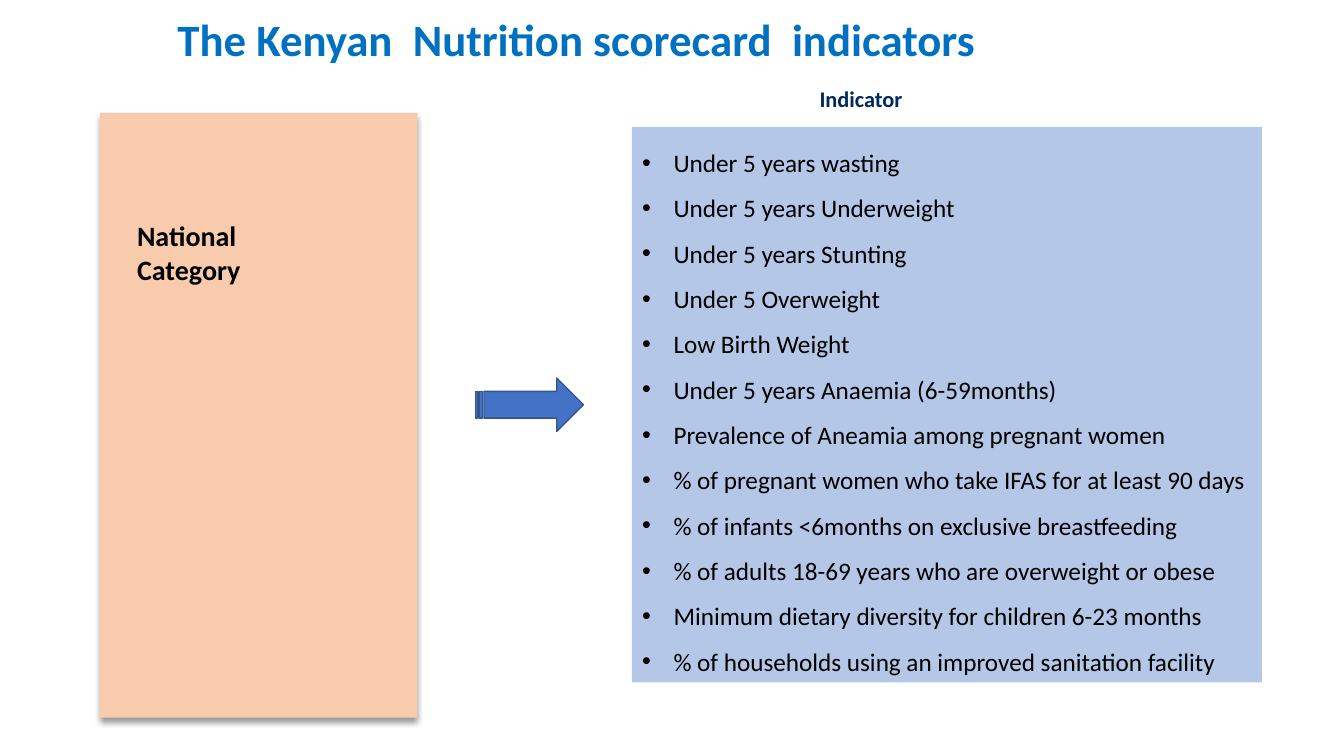
"""Build the slide of Kenyan nutrition scorecard indicators."""
from lxml.etree import SubElement
from pptx import Presentation
from pptx.dml.color import RGBColor
from pptx.enum.shapes import MSO_SHAPE as Shape
from pptx.enum.text import MSO_ANCHOR as Anchor, MSO_AUTO_SIZE as AutoSize, PP_ALIGN as Align
from pptx.oxml.ns import qn
from pptx.util import Pt

BLACK = RGBColor(0x00, 0x00, 0x00)
TITLE_BLUE = RGBColor(0x00, 0x70, 0xC0)
NAVY = RGBColor(0x00, 0x29, 0x60)
PEACH = RGBColor(0xF8, 0xCB, 0xAD)
PALE_BLUE = RGBColor(0xB4, 0xC7, 0xE7)
ARROW_BLUE = RGBColor(0x44, 0x72, 0xC4)
ARROW_EDGE = RGBColor(0x32, 0x54, 0x91)

INDICATORS = [
    "Under 5 years wasting",
    "Under 5 years Underweight",
    "Under 5 years Stunting",
    "Under 5 Overweight",
    "Low Birth Weight",
    "Under 5 years Anaemia (6-59months)",
    "Prevalence of Aneamia among pregnant women",
    "% of pregnant women who take IFAS for at least 90 days",
    "% of infants <6months on exclusive breastfeeding",
    "% of adults 18-69 years who are overweight or obese",
    "Minimum dietary diversity for children 6-23 months",
    "% of households using an improved sanitation facility",
]


class ScorecardSlide:
    FONT = "Calibri"
    BULLET_INDENT = Pt(22.5)

    def __init__(self, presentation):
        self.slide = presentation.slides.add_slide(presentation.slide_layouts[1])
        self.shapes = self.slide.shapes

    def apply(self, target, formats):
        for name, value in formats.items():
            setattr(target, name, value)

    def place(self, shape, box):
        self.apply(shape, dict(zip(("left", "top", "width", "height"), map(Pt, box))))

    def set_text(self, shape, lines, size, color, bold=False, anchor=Anchor.TOP,
                 spacing=1.0, inset=(0, 0), wrap=True):
        frame = shape.text_frame
        frame.text = "\n".join(lines)
        across, down = map(Pt, inset)
        self.apply(frame, {
            "auto_size": AutoSize.NONE, "word_wrap": wrap, "vertical_anchor": anchor,
            "margin_left": across, "margin_right": across,
            "margin_top": down, "margin_bottom": down,
        })
        for paragraph in frame.paragraphs:
            self.apply(paragraph, {"alignment": Align.LEFT, "line_spacing": spacing,
                                   "space_before": Pt(0), "space_after": Pt(0)})
            for run in paragraph.runs:
                self.apply(run.font, {"name": self.FONT, "size": Pt(size), "bold": bold})
                run.font.color.rgb = color

    def title(self, text, box):
        shape = self.shapes.title
        self.place(shape, box)
        self.set_text(shape, [text], 32, TITLE_BLUE, bold=True, spacing=0.9)

    def bullet_list(self, items, box):
        shape = self.slide.placeholders[1]
        self.place(shape, box)
        shape.fill.solid()
        shape.fill.fore_color.rgb = PALE_BLUE
        self.set_text(shape, items, 18, BLACK, spacing=1.5, inset=(7.2, 3.6), wrap=False)
        for paragraph in shape.text_frame.paragraphs:
            properties = paragraph._p.get_or_add_pPr()
            properties.set("marL", str(self.BULLET_INDENT))
            properties.set("indent", str(-self.BULLET_INDENT))
            SubElement(properties, qn("a:buFont"), typeface="Arial")
            SubElement(properties, qn("a:buChar"), char="•")

    def label(self, text, box, size, color, anchor=Anchor.TOP):
        shape = self.shapes.add_textbox(*map(Pt, box))
        self.set_text(shape, [text], size, color, bold=True, anchor=anchor)

    def block(self, kind, box, fill, edge=None):
        shape = self.shapes.add_shape(kind, *map(Pt, box))
        shape.shadow.inherit = False
        shape.fill.solid()
        shape.fill.fore_color.rgb = fill
        if edge is None:
            shape.line.fill.background()
        else:
            shape.line.color.rgb = edge
            shape.line.width = Pt(1)
        return shape

    def drop_shadow(self, shape):
        effects = shape._element.spPr.find(qn("a:effectLst"))
        shadow = SubElement(effects, qn("a:outerShdw"), blurRad=str(Pt(4)),
                            dist=str(Pt(3)), dir="5400000", rotWithShape="0")
        color = SubElement(shadow, qn("a:srgbClr"), val=str(BLACK))
        SubElement(color, qn("a:alpha"), val="40000")


def main():
    presentation = Presentation()
    presentation.slide_width, presentation.slide_height = Pt(960), Pt(540)
    scorecard = ScorecardSlide(presentation)
    category = scorecard.block(Shape.RECTANGLE, (71.3, 80.6, 226.8, 432), PEACH)
    scorecard.drop_shadow(category)
    scorecard.title("The Kenyan  Nutrition scorecard  indicators", (126.7, 13, 774.7, 56.9))
    scorecard.label("National Category", (97.9, 156.2, 110.9, 48.2), 20, BLACK)
    scorecard.bullet_list(INDICATORS, (451.4, 90.7, 450, 396.7))
    scorecard.label("Indicator", (585.4, 60.5, 163.4, 19.4), 16, NAVY, Anchor.BOTTOM)
    scorecard.block(Shape.STRIPED_RIGHT_ARROW, (339.8, 270, 77, 38.2), ARROW_BLUE, ARROW_EDGE)
    presentation.save("out.pptx")


if __name__ == "__main__":
    main()
